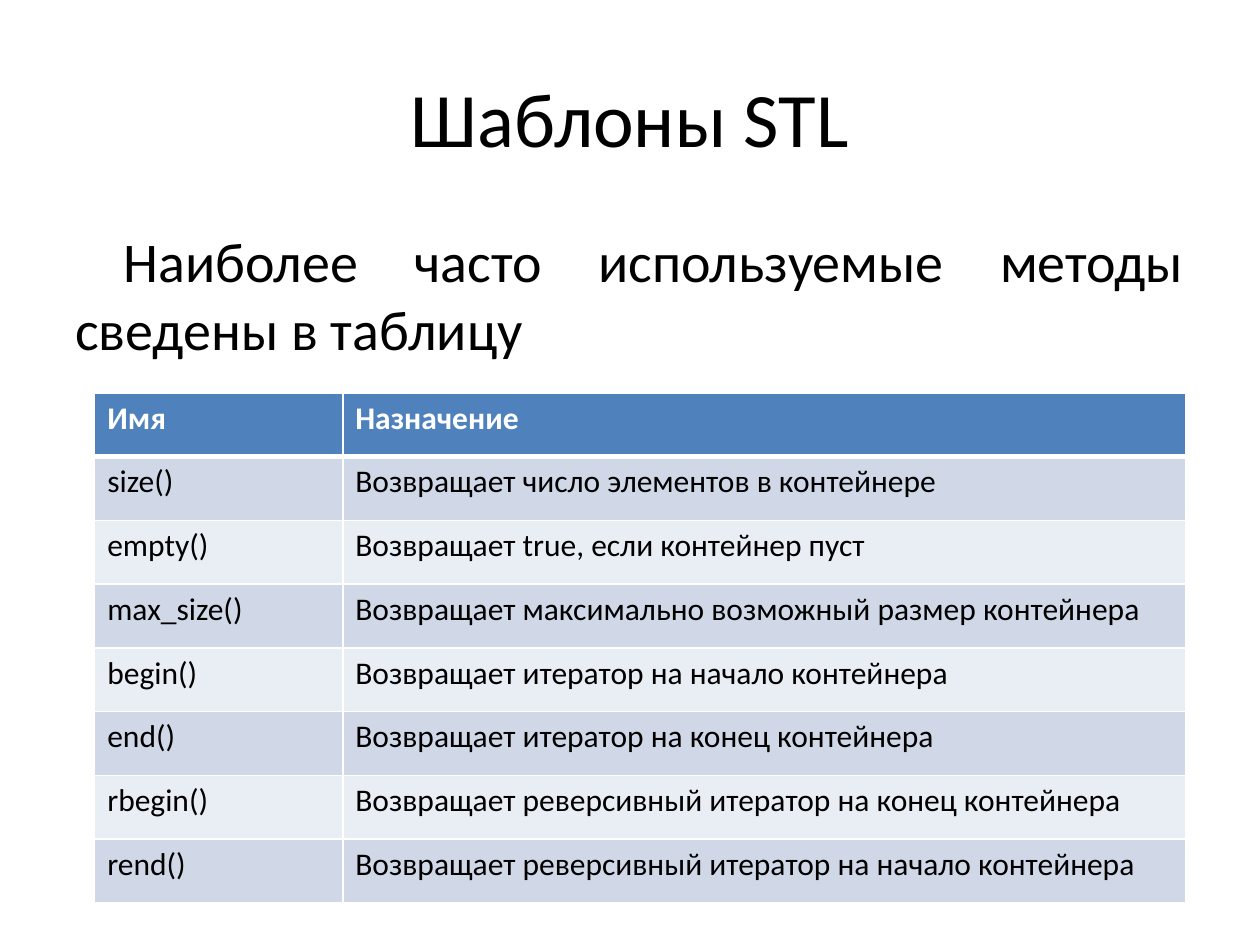
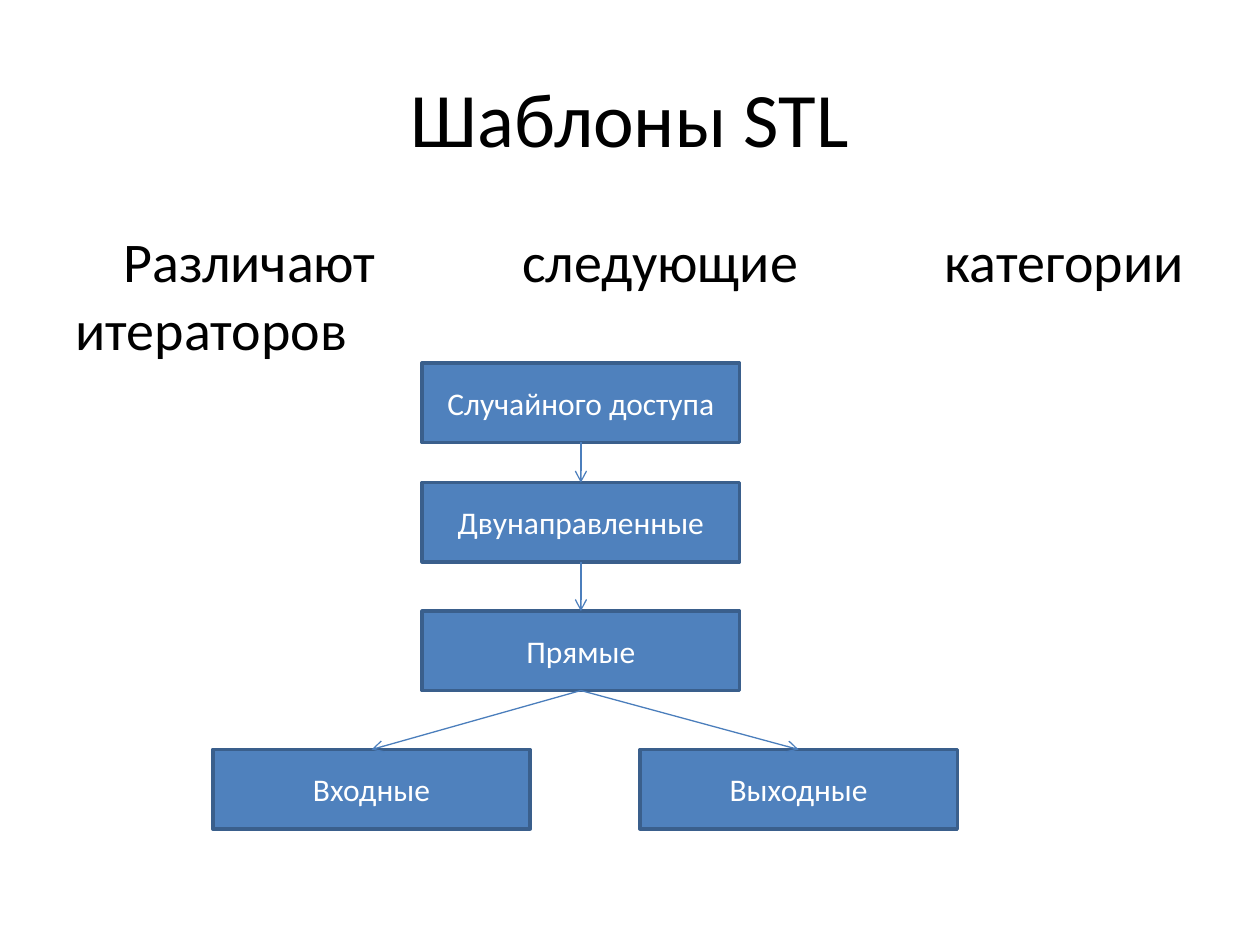
from lxml import etree
from pptx import Presentation
from pptx.dml.color import RGBColor
from pptx.enum.shapes import MSO_CONNECTOR, MSO_SHAPE
from pptx.enum.text import MSO_ANCHOR, PP_ALIGN
from pptx.oxml.ns import qn
from pptx.util import Cm, Pt

STRAIGHT, RECT = MSO_CONNECTOR.STRAIGHT, MSO_SHAPE.RECTANGLE
TOP, MIDDLE = MSO_ANCHOR.TOP, MSO_ANCHOR.MIDDLE
LEFT, CENTER, JUSTIFY = PP_ALIGN.LEFT, PP_ALIGN.CENTER, PP_ALIGN.JUSTIFY
SIDE_TOP, SIDE_BOTTOM = 0, 2

COLORS = {
    "text": "000000",
    "white": "FFFFFF",
    "blue": "4F81BD",
    "box_line": "3A5F8C",
    "arrow": "4B7EBC",
    "band_dark": "D0D8E8",
    "band_light": "E9EDF4",
}
FORMATS = {
    "title": {"size": Pt(44), "color": "text"},
    "body": {"size": Pt(32), "color": "text"},
    "head": {"size": Pt(18), "color": "white", "bold": True},
    "cell": {"size": Pt(18), "color": "text", "bold": False},
    "box": {"size": Pt(18), "color": "white"},
}

TITLE = "Шаблоны STL"
METHODS = [
    ("Имя", "Назначение"),
    ("size()", "Возвращает число элементов в контейнере"),
    ("empty()", "Возвращает true, если контейнер пуст"),
    ("max_size()", "Возвращает максимально возможный размер контейнера"),
    ("begin()", "Возвращает итератор на начало контейнера"),
    ("end()", "Возвращает итератор на конец контейнера"),
    ("rbegin()", "Возвращает реверсивный итератор на конец контейнера"),
    ("rend()", "Возвращает реверсивный итератор на начало контейнера"),
]
COLUMN_WIDTHS = (5, 17)
BOX_WIDTH, BOX_HEIGHT = 6.4, 1.6
ITERATORS = {
    "Случайного доступа": (8.51, 7.32),
    "Двунаправленные": (8.51, 9.73),
    "Прямые": (8.51, 12.32),
    "Входные": (4.29, 15.11),
    "Выходные": (12.9, 15.11),
}
ARROWS = [
    ("Случайного доступа", "Двунаправленные"),
    ("Двунаправленные", "Прямые"),
    ("Прямые", "Входные"),
    ("Прямые", "Выходные"),
]


def rgb(name):
    """Return the named colour."""
    return RGBColor.from_string(COLORS[name])


def write(tf, text, style, align):
    """Write one formatted paragraph into a text frame and return it."""
    p = tf.paragraphs[0]
    p.alignment = align
    r = p.add_run()
    r.text = text
    r.font.name = "Calibri"
    for key, value in FORMATS[style].items():
        if key == "color":
            r.font.color.rgb = rgb(value)
        else:
            setattr(r.font, key, value)
    return p


def add_text(s, box, text, style, align, anchor):
    """Add a wrapped text box and return its paragraph."""
    tf = s.shapes.add_textbox(*map(Cm, box)).text_frame
    tf.word_wrap = True
    tf.vertical_anchor = anchor
    return write(tf, text, style, align)


def add_slide(prs, lead):
    """Add a slide with the shared title and an indented lead sentence."""
    s = prs.slides.add_slide(prs.slide_layouts[6])
    add_text(s, (1.27, 0.76, 22.86, 3.18), TITLE, "title", CENTER, MIDDLE)
    p = add_text(s, (1.27, 4.45, 22.86, 12.57), lead, "body", JUSTIFY, TOP)
    p._p.get_or_add_pPr().set("indent", str(Cm(0.97)))
    return s


def set_borders(cell, widths):
    """Draw white cell borders with a width for each side."""
    tcPr = cell._tc.get_or_add_tcPr()
    for side, width in widths.items():
        ln = etree.SubElement(tcPr, qn(f"a:ln{side}"), w=str(Pt(width)))
        fill = etree.SubElement(ln, qn("a:solidFill"))
        etree.SubElement(fill, qn("a:srgbClr"), val=COLORS["white"])


def add_methods_table(s):
    """Add the banded table of container methods."""
    frame = s.shapes.add_table(len(METHODS), len(COLUMN_WIDTHS),
                               Cm(1.91), Cm(7.92), Cm(sum(COLUMN_WIDTHS)), Cm(10.28))
    table = frame.table
    for column, width in zip(table.columns, COLUMN_WIDTHS):
        column.width = Cm(width)
    for i, row in enumerate(METHODS):
        style = "cell" if i else "head"
        band = ("band_dark" if i % 2 else "band_light") if i else "blue"
        widths = {"L": 1, "R": 1, "T": 3 if i == 1 else 1, "B": 1 if i else 3}
        for j, text in enumerate(row):
            cell = table.cell(i, j)
            write(cell.text_frame, text, style, LEFT)
            set_borders(cell, widths)
            cell.fill.solid()
            cell.fill.fore_color.rgb = rgb(band)


def add_box(s, text, x, y):
    """Add a labelled rectangle of the iterator diagram."""
    sp = s.shapes.add_shape(RECT, *map(Cm, (x, y, BOX_WIDTH, BOX_HEIGHT)))
    sp.shadow.inherit = False
    sp.fill.solid()
    sp.fill.fore_color.rgb = rgb("blue")
    sp.line.color.rgb = rgb("box_line")
    sp.line.width = Pt(2)
    sp.text_frame.word_wrap = True
    sp.text_frame.vertical_anchor = MIDDLE
    write(sp.text_frame, text, "box", CENTER)
    return sp


def add_arrow(s, upper, lower):
    """Join the bottom of one box to the top of another with an arrow."""
    cxn = s.shapes.add_connector(STRAIGHT, 0, 0, 0, 0)
    cxn.begin_connect(upper, SIDE_BOTTOM)
    cxn.end_connect(lower, SIDE_TOP)
    cxn.line.color.rgb = rgb("arrow")
    cxn.line.width = Pt(0.75)
    etree.SubElement(cxn.line._get_or_add_ln(), qn("a:tailEnd"), type="arrow")
    etree.SubElement(cxn._element.spPr, qn("a:effectLst"))


def main():
    """Build the two slides and save them."""
    prs = Presentation()
    prs.slide_width, prs.slide_height = Cm(25.4), Cm(19.05)

    s = add_slide(prs, "Наиболее часто используемые методы сведены в таблицу")
    add_methods_table(s)

    s = add_slide(prs, "Различают следующие категории итераторов")
    boxes = {name: add_box(s, name, x, y) for name, (x, y) in ITERATORS.items()}
    for upper, lower in ARROWS:
        add_arrow(s, boxes[upper], boxes[lower])

    prs.save("out.pptx")


if __name__ == "__main__":
    main()
